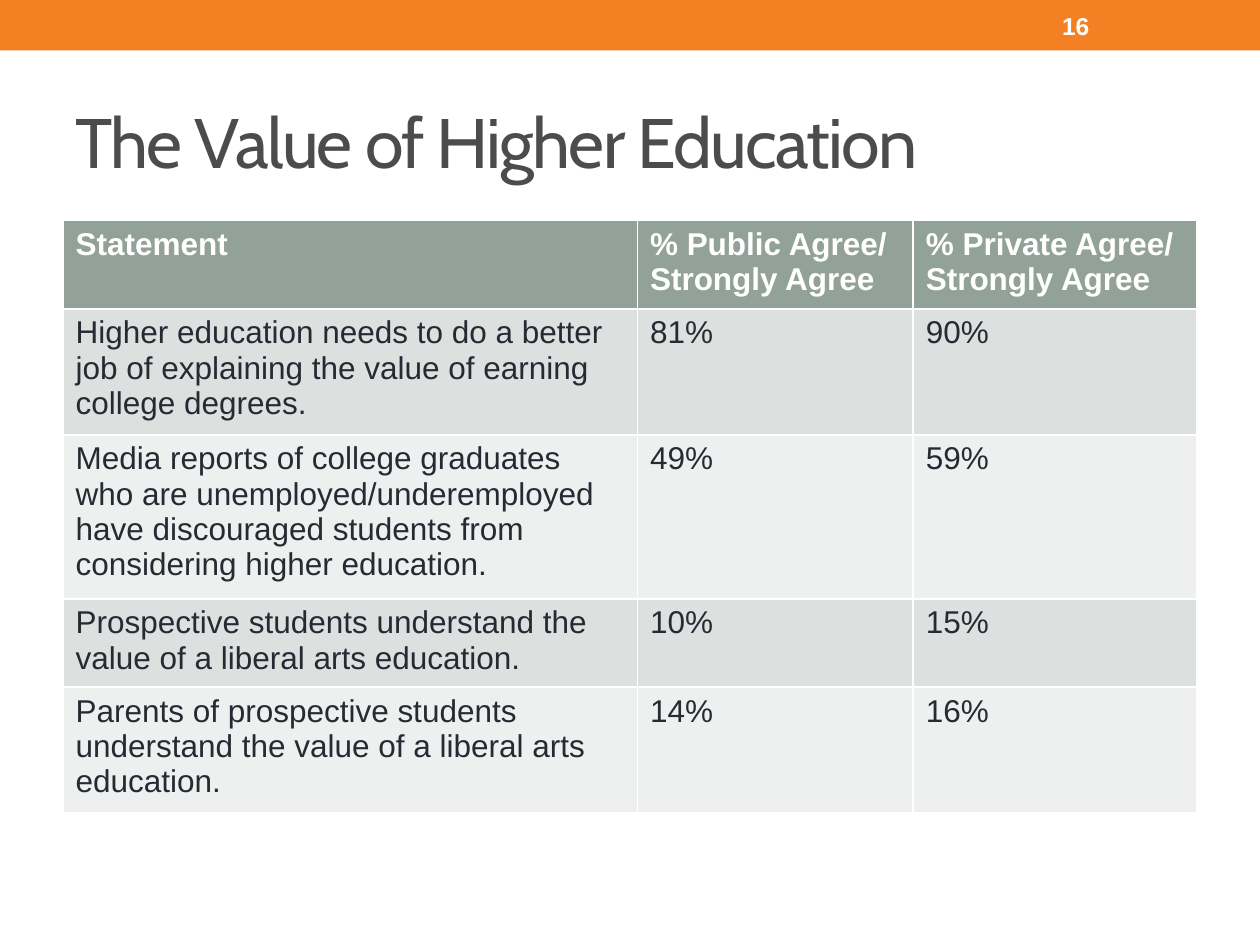
from pptx import Presentation
from pptx.dml.color import RGBColor
from pptx.enum import shapes, text
from pptx.util import Cm, Pt

HUES = {
    "bar": "F48024", "title": "4C4C4C", "white": "FFFFFF", "ink": "292934",
    "head": "93A299", "odd": "DCE0DE", "even": "EEF0EF",
}
ROWS = [
    ("Statement", "% Public Agree/ Strongly Agree",
     "% Private Agree/ Strongly Agree"),
    ("Higher education needs to do a better job of explaining the value of "
     "earning college degrees.", "81%", "90%"),
    ("Media reports of college graduates who are unemployed/underemployed\n"
     "have discouraged students from considering higher education.",
     "49%", "59%"),
    ("Prospective students understand the value of a liberal arts education.",
     "10%", "15%"),
    ("Parents of prospective students understand the value of a liberal arts "
     "education.", "14%", "16%"),
]
WIDTHS = (11.58, 5.56, 5.72)


def hue(name):
    return RGBColor.from_string(HUES[name])


def paint(shape, name):
    shape.fill.solid()
    shape.fill.fore_color.rgb = hue(name)


def style(frame, size, name, bold=False, face="Arial"):
    for par in frame.paragraphs:
        par.alignment = text.PP_ALIGN.LEFT
        font = par.font
        font.name, font.size, font.bold = face, Pt(size), bold
        font.color.rgb = hue(name)


def add_bar(slide, x, y, w, h):
    # Band across the top
    bar = slide.shapes.add_shape(
        shapes.MSO_SHAPE.RECTANGLE, Cm(x), Cm(y), Cm(w), Cm(h))
    bar.shadow.inherit = False
    paint(bar, "bar")
    bar.line.fill.background()

    # Slide number
    box = slide.shapes.add_textbox(
        Cm(x + w - 4.24), Cm(y + 0.05), Cm(2.97), Cm(h - 0.1))
    frame = box.text_frame
    frame.word_wrap = True
    frame.vertical_anchor = text.MSO_ANCHOR.MIDDLE
    frame.text = "16"
    style(frame, 14, "white", bold=True)


def add_title(slide, x, y, w, h):
    title = slide.shapes.title
    title.left, title.top, title.width, title.height = map(Cm, (x, y, w, h))
    frame = title.text_frame
    frame.text = "The Value of Higher Education"
    frame.vertical_anchor = text.MSO_ANCHOR.MIDDLE
    style(frame, 40, "title", face="Cabin")
    # Tighter letter spacing, in hundredths of a point
    for run in frame.paragraphs[0].runs:
        run.font._element.set("spc", "-100")


def add_grid(slide, x, y, w, h):
    # Rows grow to fit their text
    grid = slide.shapes.add_table(
        len(ROWS), len(WIDTHS), Cm(x), Cm(y), Cm(w), Cm(h)).table
    for col, width in zip(grid.columns, WIDTHS):
        col.width = Cm(width)
    for i, row in enumerate(ROWS):
        fill = "head" if i == 0 else "odd" if i % 2 else "even"
        for j, words in enumerate(row):
            cell = grid.cell(i, j)
            cell.text = words
            paint(cell, fill)
            style(cell.text_frame, 18, "ink" if i else "white", bold=i == 0)


def main():
    deck = Presentation()
    deck.slide_width, deck.slide_height = Cm(25.4), Cm(19.05)
    slide = deck.slides.add_slide(deck.slide_layouts[5])
    add_bar(slide, 0, 0, 25.4, 1.02)
    add_title(slide, 1.27, 1.47, 22.86, 2.74)
    add_grid(slide, 1.27, 4.45, 22.86, 5.2)
    deck.save("out.pptx")


if __name__ == "__main__":
    main()
